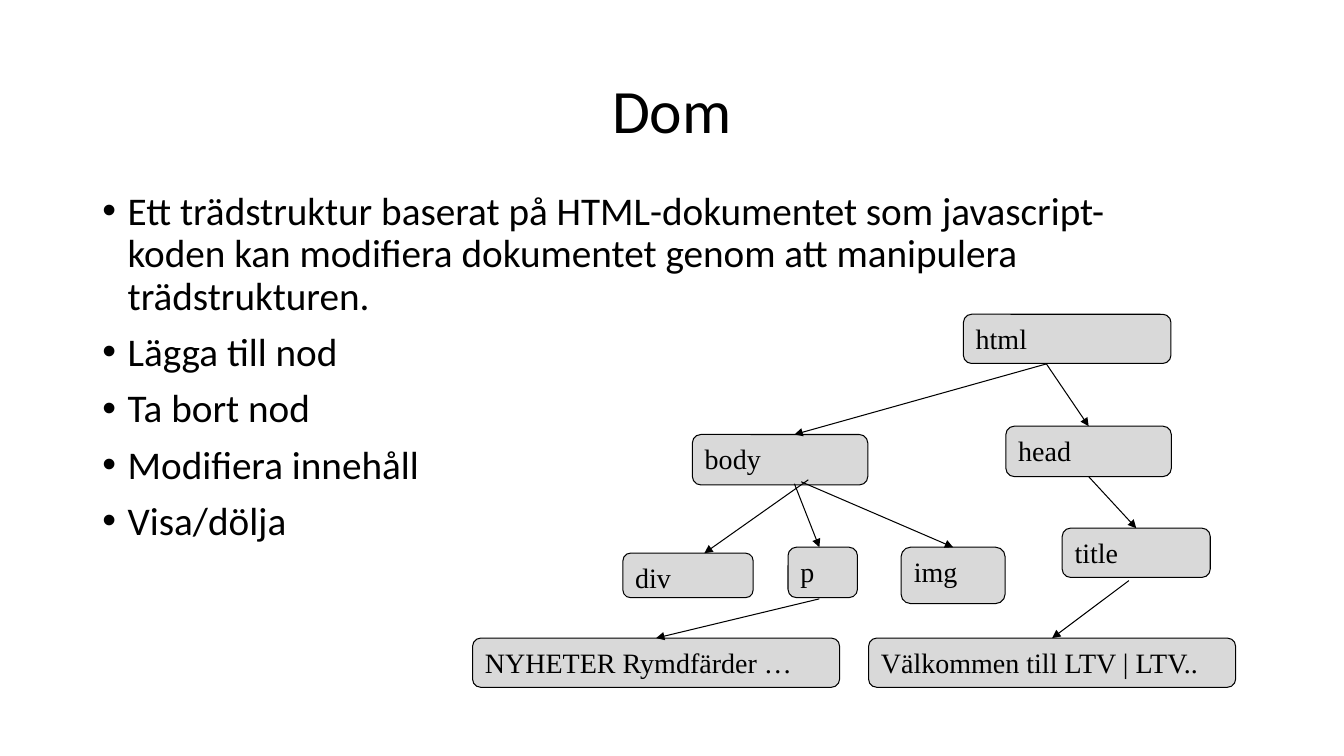
"""Build a slide that explains the DOM as a tree of HTML nodes."""
import pptx
import pptx.dml.color
import pptx.enum.shapes
import pptx.enum.text
import pptx.oxml.ns
import pptx.util
from lxml import etree

Cm = pptx.util.Cm
Pt = pptx.util.Pt
qn = pptx.oxml.ns.qn
PP_ALIGN = pptx.enum.text.PP_ALIGN
ANCHOR = pptx.enum.text.MSO_ANCHOR

BLACK, GREY = "000000", "D9D9D9"
TITLE = "Dom"
BULLETS = [
    "Ett trädstruktur baserat på HTML-dokumentet som javascript- koden kan "
    "modifiera dokumentet genom att manipulera trädstrukturen.",
    "Lägga till nod",
    "Ta bort nod",
    "Modifiera innehåll",
    "Visa/dölja",
]
NODES = {
    "html": ("html", 24.28, 7.92, 5.23, 1.24),
    "head": ("head", 25.35, 10.74, 4.17, 1.27),
    "div": ("div", 15.7, 13.94, 3.28, 1.12),
    "img": ("img", 22.71, 13.79, 2.62, 1.42),
    "p": ("p", 19.86, 13.79, 1.75, 1.27),
    "news": ("NYHETER Rymdfärder …", 11.91, 16.08, 9.25, 1.24),
    "title": ("title", 26.77, 13.31, 3.73, 1.24),
    "welcome": ("Välkommen till LTV | LTV..", 21.89, 16.08, 9.25, 1.24),
    "body": ("body", 17.45, 10.95, 4.42, 1.27),
}
HTML_FORK = (26.37, 9.17)
ARROWS = [
    (HTML_FORK, "head"),
    (HTML_FORK, (20.02, 10.95)),
    ("head", "title"),
    ((28.45, 14.63), "welcome"),
    ((20.19, 12.14), "img"),
    ((20.37, 12.09), (17.75, 13.94)),
    ((20.02, 12.19), (20.65, 13.79)),
    ((20.65, 15.09), "news"),
]


def color(value):
    return pptx.dml.color.RGBColor.from_string(value)


def set_font(p, name, size):
    p.font.name = name
    p.font.size = Pt(size)
    p.font.color.rgb = color(BLACK)


def set_line(sp):
    sp.line.color.rgb = color(BLACK)
    sp.line.width = Pt(0.75)


def add_text(slide, box, lines, size, anchor):
    tf = slide.shapes.add_textbox(*map(Cm, box)).text_frame
    tf.word_wrap = True
    tf.vertical_anchor = anchor
    for i, line in enumerate(lines):
        p = tf.paragraphs[0] if i == 0 else tf.add_paragraph()
        p.text = line
        p.line_spacing = 0.9
        set_font(p, "Calibri", size)
    return tf.paragraphs


def add_bullet(p):
    p.space_before = Pt(10)
    pPr = p._p.get_or_add_pPr()
    pPr.set("marL", str(Cm(0.64)))
    pPr.set("indent", str(-Cm(0.64)))
    bullet_font = etree.Element(qn("a:buFont"), typeface="Arial")
    bullet = etree.Element(qn("a:buChar"), char="•")
    pPr.find(qn("a:spcBef")).addnext(bullet_font)
    bullet_font.addnext(bullet)


def add_node(slide, text, *box):
    sp = slide.shapes.add_shape(
        pptx.enum.shapes.MSO_SHAPE.ROUNDED_RECTANGLE, *map(Cm, box))
    sp.shadow.inherit = False
    sp.fill.solid()
    sp.fill.fore_color.rgb = color(GREY)
    set_line(sp)
    tf = sp.text_frame
    tf.word_wrap = False
    tf.vertical_anchor = ANCHOR.TOP
    p = tf.paragraphs[0]
    p.text = text
    p.alignment = PP_ALIGN.LEFT
    set_font(p, "Times New Roman", 20)
    return sp


def add_arrow(slide, nodes, start, end):
    points = [(0, 0) if isinstance(e, str) else e for e in (start, end)]
    line = slide.shapes.add_connector(
        pptx.enum.shapes.MSO_CONNECTOR.STRAIGHT,
        *(Cm(v) for point in points for v in point))
    if start in nodes:
        line.begin_connect(nodes[start], 2)
    if end in nodes:
        line.end_connect(nodes[end], 0)
    set_line(line)
    etree.SubElement(line.line._get_or_add_ln(), qn("a:tailEnd"), type="triangle")
    etree.SubElement(line._element.spPr, qn("a:effectLst"))


def main():
    prs = pptx.Presentation()
    prs.slide_width, prs.slide_height = Cm(33.87), Cm(19.05)
    slide = prs.slides.add_slide(prs.slide_layouts[6])
    title = add_text(slide, (2.33, 1.01, 29.21, 3.68), [TITLE], 44, ANCHOR.MIDDLE)
    title[0].alignment = PP_ALIGN.CENTER
    for p in add_text(slide, (2.33, 4.7, 26.42, 12.62), BULLETS, 28, ANCHOR.TOP):
        add_bullet(p)
    nodes = {key: add_node(slide, *node) for key, node in NODES.items()}
    for start, end in ARROWS:
        add_arrow(slide, nodes, start, end)
    prs.save("out.pptx")


if __name__ == "__main__":
    main()
